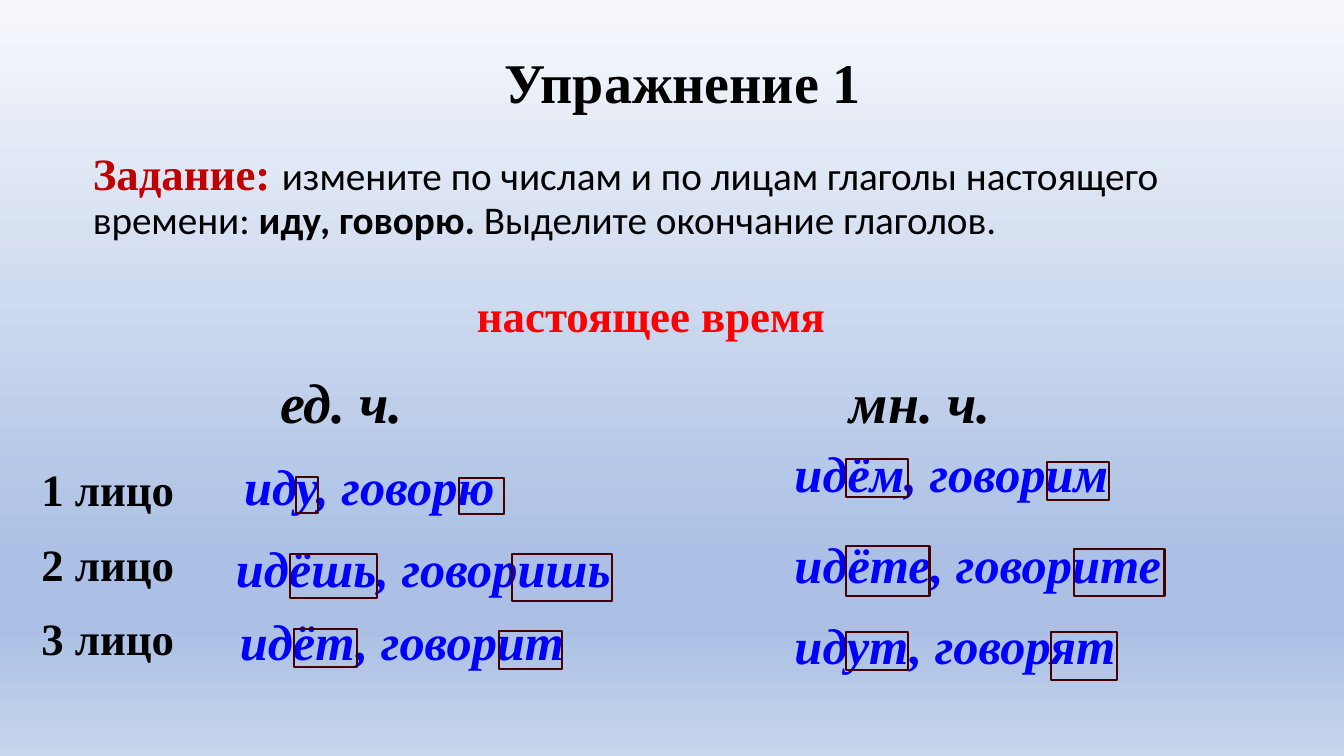
import pptx
import pptx.util
import pptx.dml.color
import pptx.enum.shapes
import pptx.enum.text
import pptx.oxml.ns
from lxml import etree
from pptx.util import Inches

COLORS = {"black": "000000", "task": "C00000", "tense": "FF0000",
          "verb": "0000FF", "ending": "460000"}
BACKGROUND = [(0, "F6F8FC"), (74, "ABC0E4"), (83, "ABC0E4"), (100, "C7D5ED")]
SERIF, SANS = "Times New Roman", "Calibri"
NO_STYLE = "{2D5ABB26-0587-4C30-8999-92F81FD0307C}"
qn = pptx.oxml.ns.qn

VERB_PAIRS = [
    (2.32, 4.52, 11.5, "иду, говорю",
     [(0.62, 0.21, 0.21, 0.36), (2.23, 0.22, 0.45, 0.36)]),
    (2.24, 5.33, 4.39, "идёшь, говоришь",
     [(0.64, 0.17, 0.86, 0.43), (2.84, 0.17, 0.99, 0.46)]),
    (2.28, 6.06, 4.39, "идёт, говорит",
     [(0.64, 0.18, 0.62, 0.38), (2.67, 0.2, 0.62, 0.38)]),
    (7.78, 4.39, 4.39, "идём, говорим",
     [(0.61, 0.16, 0.62, 0.38), (2.6, 0.19, 0.62, 0.38)]),
    (7.78, 5.29, 4.39, "идёте, говорите",
     [(0.61, 0.13, 0.83, 0.49), (2.87, 0.16, 0.9, 0.46)]),
    (7.78, 6.1, 4.39, "идут, говорят",
     [(0.61, 0.17, 0.62, 0.38), (2.64, 0.17, 0.66, 0.48)]),
]


def rgb(name):
    return pptx.dml.color.RGBColor.from_string(COLORS[name])


def add_run(paragraph, text, size, color="black", face=SERIF, bold=True, italic=False):
    run = paragraph.add_run()
    run.text = text
    run.font.size = pptx.util.Pt(size)
    run.font.name = face
    run.font.bold = bold
    run.font.italic = italic
    run.font.color.rgb = rgb(color)


def paint_background(slide):
    fill = slide.background.fill
    fill.gradient()
    fill.gradient_angle = 270
    stops = slide.element.find(".//" + qn("a:gsLst"))
    for stop in list(stops):
        stops.remove(stop)
    for percent, color in BACKGROUND:
        stop = etree.SubElement(stops, qn("a:gs"), pos=str(percent * 1000))
        etree.SubElement(stop, qn("a:srgbClr"), val=color)


def add_task(slide, box):
    body = slide.placeholders[1]
    body.left, body.top, body.width, body.height = map(Inches, box)
    frame = body.text_frame
    frame.word_wrap = True
    frame.auto_size = pptx.enum.text.MSO_AUTO_SIZE.NONE
    frame.vertical_anchor = pptx.enum.text.MSO_ANCHOR.TOP
    task = frame.paragraphs[0]
    task.alignment = pptx.enum.text.PP_ALIGN.LEFT
    task.line_spacing = 0.9
    task.space_before = pptx.util.Pt(0)
    add_run(task, "Задание: ", 32, "task")
    add_run(task, "измените по числам и по лицам глаголы настоящего времени: ",
            28, face=SANS, bold=False)
    add_run(task, "иду, говорю. ", 28, face=SANS)
    add_run(task, "Выделите окончание глаголов.", 28, face=SANS, bold=False)


def add_plain_table(slide, box, lines, size, color="black", italic=False,
                    spacing=None, row_height=0):
    frame = slide.shapes.add_table(1, 1, *map(Inches, box))
    table = frame.table
    table.first_row = table.horz_banding = False
    table.rows[0].height = Inches(row_height)
    frame.height = Inches(box[3])
    frame.element.find(".//" + qn("a:tableStyleId")).text = NO_STYLE
    cell = table.cell(0, 0)
    cell.vertical_anchor = pptx.enum.text.MSO_ANCHOR.MIDDLE
    properties = cell._tc.get_or_add_tcPr()
    for side in ("lnL", "lnR", "lnT", "lnB"):
        border = etree.SubElement(properties, qn("a:" + side))
        etree.SubElement(border, qn("a:noFill"))
    cell.fill.background()
    text = cell.text_frame
    for index, line in enumerate(lines):
        paragraph = text.add_paragraph() if index else text.paragraphs[0]
        if spacing:
            paragraph.line_spacing = spacing
        add_run(paragraph, line, size, color, italic=italic)
    return text.paragraphs[0]


def add_title(slide, box):
    heading = add_plain_table(slide, box, ["Упражнение 1"], 40)
    heading.alignment = pptx.enum.text.PP_ALIGN.CENTER


def add_headings(slide, left, top):
    add_plain_table(slide, (left + 1.95, top, 11.5, 0.63),
                    ["настоящее время"], 32, "tense")
    numbers = add_plain_table(slide, (left, top + 0.66, 9.12, 1),
                              ["ед. ч.\tмн. ч."], 40, italic=True, row_height=1)
    tabs = etree.SubElement(numbers._p.get_or_add_pPr(), qn("a:tabLst"))
    etree.SubElement(tabs, qn("a:tab"), pos=str(Inches(5.65)), algn="l")


def add_persons(slide, box):
    persons = [f"{number} лицо" for number in (1, 2, 3)]
    add_plain_table(slide, box, persons, 32, spacing=1.5)


def add_verb_pair(slide, box, verbs, endings):
    left, top = box[:2]
    add_plain_table(slide, box, [verbs], 36, "verb", italic=True)
    for dx, dy, width, height in endings:
        ending = slide.shapes.add_shape(
            pptx.enum.shapes.MSO_SHAPE.RECTANGLE,
            Inches(left + dx), Inches(top + dy), Inches(width), Inches(height))
        ending.shadow.inherit = False
        ending.fill.background()
        ending.line.color.rgb = rgb("ending")
        ending.line.width = pptx.util.Pt(1.5)


def main():
    presentation = pptx.Presentation()
    presentation.slide_width = Inches(13.33)
    presentation.slide_height = Inches(7.5)
    slide = presentation.slides.add_slide(presentation.slide_layouts[0])
    title = slide.shapes.title.element
    title.getparent().remove(title)
    paint_background(slide)
    add_title(slide, (1.02, 0.48, 11.5, 0.77))
    add_task(slide, (0.82, 1.46, 11.61, 1.86))
    add_headings(slide, 2.68, 2.85)
    add_persons(slide, (0.31, 4.33, 2.44, 2.41))
    for left, top, width, verbs, endings in VERB_PAIRS:
        add_verb_pair(slide, (left, top, width, 0.7), verbs, endings)
    presentation.save("out.pptx")


if __name__ == "__main__":
    main()
